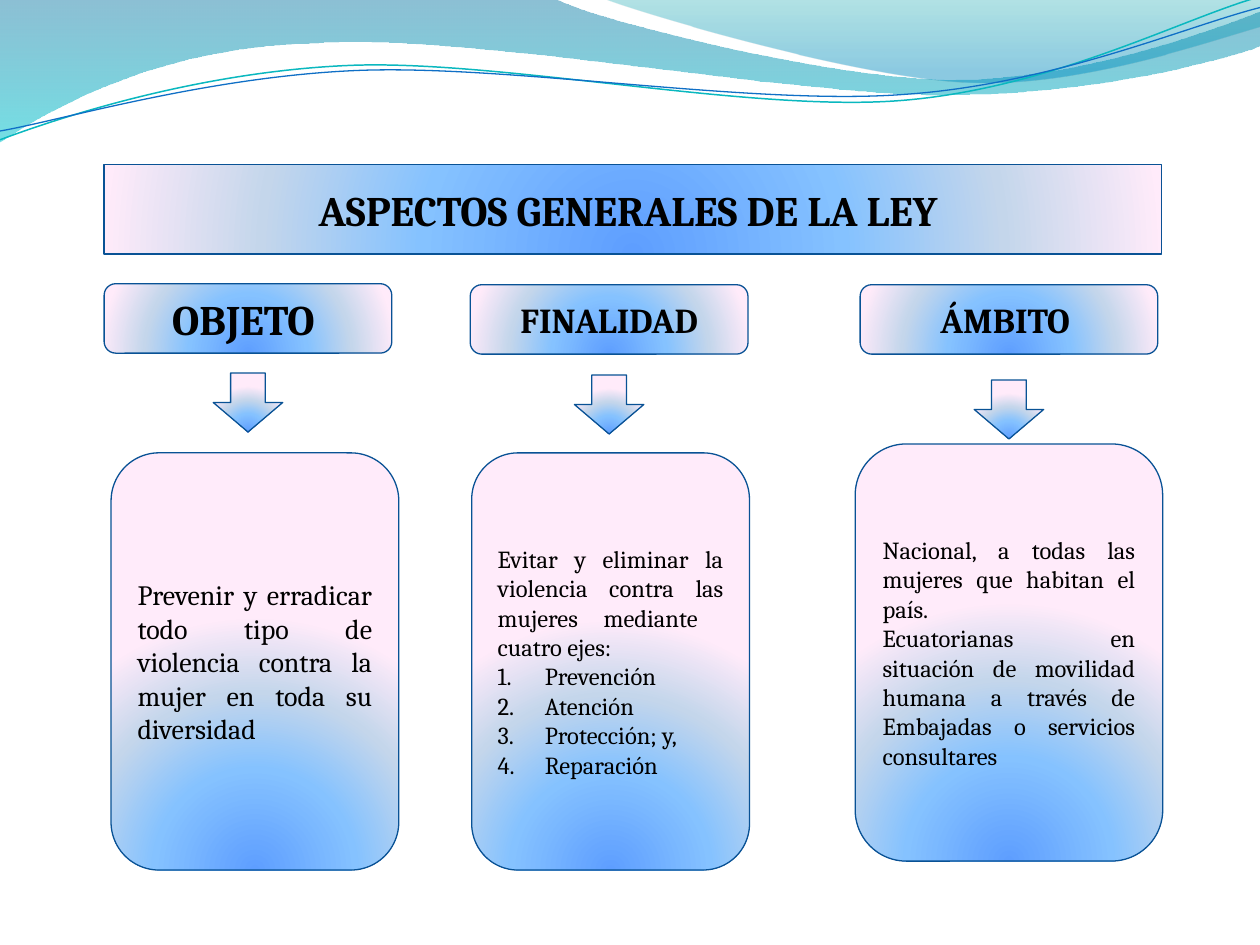
from dataclasses import dataclass

from lxml.etree import SubElement
from pptx import Presentation
from pptx.dml.color import RGBColor
from pptx.enum.shapes import MSO_SHAPE
from pptx.enum.text import MSO_ANCHOR, PP_ALIGN
from pptx.oxml import parse_xml
from pptx.oxml.ns import nsdecls, qn
from pptx.util import Cm, Pt


@dataclass(frozen=True)
class Theme:
    """Colours, font and type sizes of the slide."""
    font: str = "Cambria"
    ink: str = "000000"
    edge: str = "095295"
    teal: str = "0AB8BF"
    blue: str = "0F6FC6"
    glow: tuple = ((0, "5E9EFF", 100), (40, "85C2FF", 100),
                   (70, "C4D6EB", 100), (100, "FFEBFA", 100))
    wave: tuple = ((0, "0074A1", 45), (100, "00C6CF", 55))
    crest: tuple = ((0, "00A1A9", 30), (80, "008BBF", 45))
    big: int = 24
    mid: int = 20
    text: int = 16
    small: int = 14


THEME = Theme()
GLOW = '<a:path path="circle"><a:fillToRect l="50000" t="100000" r="50000" b="0"/></a:path>'
DOWN = '<a:lin ang="5400000" scaled="0"/>'


def shade(shape, stops, mode):
    """Fill a shape with a gradient of (position, colour, opacity) stops."""
    shape.fill.background()
    marks = ""
    for pos, tone, part in stops:
        alpha = f'<a:alpha val="{part * 1000}"/>' if part < 100 else ""
        marks += f'<a:gs pos="{pos * 1000}"><a:srgbClr val="{tone}">{alpha}</a:srgbClr></a:gs>'
    grad = parse_xml(f'<a:gradFill {nsdecls("a")} rotWithShape="1">'
                     f'<a:gsLst>{marks}</a:gsLst>{mode}</a:gradFill>')
    props = shape.element.spPr
    props.replace(props.find(qn("a:noFill")), grad)


def stroke(shape, tone, width=0.75):
    """Give a shape a solid outline."""
    shape.line.color.rgb = RGBColor.from_string(tone)
    shape.line.width = Pt(width)


def write(frame, text, size=THEME.small, bold=False, align=PP_ALIGN.JUSTIFY, count=False):
    """Add one paragraph, numbered if count is set."""
    first = frame.paragraphs[0]
    para = frame.add_paragraph() if first.runs else first
    para.alignment = align
    run = para.add_run()
    run.text = text
    run.font.name, run.font.size, run.font.bold = THEME.font, Pt(size), bold
    run.font.color.rgb = RGBColor.from_string(THEME.ink)
    if count:
        props = para._p.get_or_add_pPr()
        props.set("marL", str(Cm(0.95)))
        props.set("indent", str(-Cm(0.95)))
        SubElement(props, qn("a:buFont"), typeface=THEME.font)
        SubElement(props, qn("a:buAutoNum"), type="arabicPeriod")


def block(slide, kind, box):
    """Place a glowing preset shape and return its text frame."""
    shape = slide.shapes.add_shape(kind, *map(Cm, box))
    shape.shadow.inherit = False
    shade(shape, THEME.glow, GLOW)
    stroke(shape, THEME.edge)
    frame = shape.text_frame
    frame.word_wrap = True
    frame.vertical_anchor = MSO_ANCHOR.MIDDLE
    return frame


def trace(slide, box, start, legs, close=False):
    """Draw lines (two values) and cubic curves (six values) inside a box."""
    left, top, unit = box
    nodes = [start] + [pair for leg in legs for pair in zip(leg[::2], leg[1::2])]
    grid = [((left + x) * 1000, (top + y) * 1000) for x, y in nodes]
    pen = slide.shapes.build_freeform(*grid[0], scale=Cm(unit) / 1000)
    pen.add_line_segments(grid[1:], close=close)
    shape = pen.convert_to_shape()
    steps = iter(list(shape.element.spPr.iter(qn("a:lnTo"))))
    for leg in legs:
        step = next(steps)
        if len(leg) == 6:
            step.tag = qn("a:cubicBezTo")
            for _ in range(2):
                extra = next(steps)
                step.append(extra[0])
                extra.getparent().remove(extra)
    shape.shadow.inherit = False
    shape.fill.background()
    return shape


def waves(slide, box):
    """Draw the wave band along the top edge."""
    bands = (
        (THEME.wave, (0, 0), (
            (4.4, -0.01), (4.76, 0.17, 6.64, 0.63, 7.58, 0.63),
            (8.53, 0.63, 9.58, 0.26, 10, 0.09), (10.01, 0.36),
            (9.83, 0.44, 8.7, 0.76, 7.46, 0.75), (6.22, 0.75, 3.82, 0.28, 2.57, 0.34),
            (1.29, 0.36, 0.46, 0.83, -0.01, 1.13), (0, 0))),
        (THEME.crest, (4.79, -0.01), (
            (5.09, 0.11, 6.82, 0.62, 7.69, 0.65),
            (8.56, 0.69, 9.61, 0.32, 10, 0.21), (10, 0), (4.79, -0.01))),
    )
    for stops, start, legs in bands:
        shape = trace(slide, box, start, legs, close=True)
        shade(shape, stops, DOWN)
        shape.line.fill.background()
    lines = (
        (THEME.teal, 0.85, (0, 1.11), (
            (0.48, 0.93, 1.58, 0.57, 2.77, 0.52), (3.95, 0.47, 5.93, 0.89, 7.13, 0.8),
            (8.33, 0.71, 9.38, 0.15, 9.98, -0.02))),
        (THEME.blue, 0.75, (0, 1.04), (
            (0.47, 0.96, 1.64, 0.61, 2.83, 0.56), (4.03, 0.51, 5.97, 0.84, 7.17, 0.75),
            (8.36, 0.67, 9.41, 0.21, 10, 0.06))),
    )
    for tone, width, start, legs in lines:
        stroke(trace(slide, box, start, legs), tone, width)


def title(slide, box):
    """Place the title bar."""
    frame = block(slide, MSO_SHAPE.RECTANGLE, box)
    write(frame, "ASPECTOS GENERALES DE LA LEY ", size=THEME.big, bold=True,
          align=PP_ALIGN.CENTER)


def column(slide, box, head, size, body, drop, paras):
    """Place a heading, an arrow and a body; body gives shift, top and width."""
    x, y, w, h = box
    tall, side, arrow = 1.4, 1.4, 1.19
    frame = block(slide, MSO_SHAPE.ROUNDED_RECTANGLE, (x, y, w, tall))
    write(frame, head, size=size, bold=True, align=PP_ALIGN.CENTER)
    shift, top, wide = body
    frame = block(slide, MSO_SHAPE.ROUNDED_RECTANGLE, (x + shift, y + top, wide, h - top))
    for text, form in paras:
        write(frame, text, **form)
    block(slide, MSO_SHAPE.DOWN_ARROW, (x + (w - side) / 2, y + drop, side, arrow))


def main():
    """Build and save the slide."""
    deck = Presentation()
    deck.slide_width, deck.slide_height = Cm(25.4), Cm(19.05)
    slide = deck.slides.add_slide(deck.slide_layouts[6])
    waves(slide, (0, 0, 2.54))
    title(slide, (2.1, 3.32, 21.31, 1.8))
    aims = ("Prevención", "Atención", "Protección; y,", "Reparación ")
    column(slide, (2.1, 5.72, 5.8, 11.82), "OBJETO ", THEME.big, (0.14, 3.41, 5.8), 1.8, [
        ("Prevenir y erradicar todo tipo de violencia contra la mujer en toda su diversidad",
         {"size": THEME.text})])
    column(slide, (9.48, 5.74, 5.6, 11.8), "FINALIDAD", THEME.mid, (0.03, 3.39, 5.6), 1.82, [
        ("Evitar y eliminar la violencia contra las mujeres mediante  cuatro ejes: ", {}),
        *((aim, {"count": True}) for aim in aims)])
    column(slide, (17.34, 5.74, 6, 11.62), "ÁMBITO ", THEME.mid, (-0.1, 3.21, 6.2), 1.92, [
        ("Nacional, a todas las mujeres que habitan el país. ", {}),
        ("Ecuatorianas en situación de movilidad humana a través de Embajadas "
         "o servicios consultares ", {})])
    deck.save("out.pptx")


if __name__ == "__main__":
    main()
